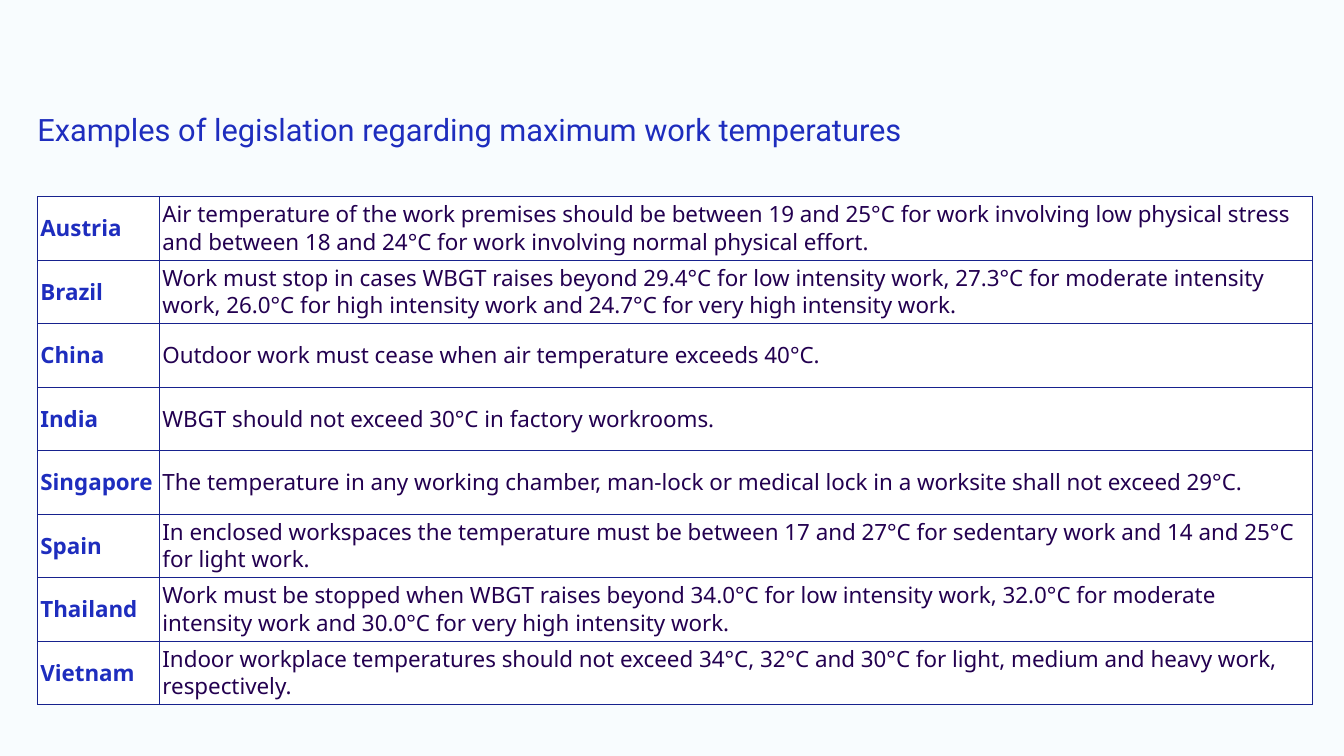
"""Build a slide with a table of national limits on work temperatures."""
from typing import NamedTuple

from lxml.etree import SubElement
from pptx import Presentation
from pptx.dml.color import RGBColor
from pptx.enum.text import MSO_ANCHOR
from pptx.oxml.ns import qn
from pptx.slide import Slide
from pptx.table import _Cell
from pptx.text.text import _Paragraph
from pptx.util import Inches, Pt

COLOURS = {
    "background": "F8FCFE",
    "heading": "1E2DBE",
    "body": "230050",
    "border": "17228E",
    "cell": "FFFFFF",
}
SLIDE_WIDTH, SLIDE_HEIGHT = Inches(13.33), Inches(7.5)
LEFT = 2.78
TITLE_TOP, TITLE_WIDTH, TITLE_HEIGHT = 15.2, 94.6, 6.8
TABLE_TOP, ROW_HEIGHT = 26, 8.4
COLUMN_WIDTHS = (9.08, 85.82)


class Rule(NamedTuple):
    country: str
    limit: str


RULES = (
    Rule("Austria", "Air temperature of the work premises should be between 19 and 25°C for work "
         "involving low physical stress and between 18 and 24°C for work involving normal "
         "physical effort."),
    Rule("Brazil", "Work must stop in cases WBGT raises beyond 29.4°C for low intensity work, "
         "27.3°C for moderate intensity work, 26.0°C for high intensity work and 24.7°C for "
         "very high intensity work."),
    Rule("China", "Outdoor work must cease when air temperature exceeds 40°C."),
    Rule("India", "WBGT should not exceed 30°C in factory workrooms."),
    Rule("Singapore", "The temperature in any working chamber, man-lock or medical lock in a "
         "worksite shall not exceed 29°C."),
    Rule("Spain", "In enclosed workspaces the temperature must be between 17 and 27°C for "
         "sedentary work and 14 and 25°C for light work."),
    Rule("Thailand", "Work must be stopped when WBGT raises beyond 34.0°C for low intensity "
         "work, 32.0°C for moderate intensity work and 30.0°C for very high intensity work."),
    Rule("Vietnam", "Indoor workplace temperatures should not exceed 34°C, 32°C and 30°C for "
         "light, medium and heavy work, respectively."),
)


def across(percent: float) -> int:
    return round(SLIDE_WIDTH * percent / 100)


def down(percent: float) -> int:
    return round(SLIDE_HEIGHT * percent / 100)


def colour(name: str) -> RGBColor:
    return RGBColor.from_string(COLOURS[name])


def write(para: _Paragraph, text: str, font: str, size: int, ink: str, bold: bool = False) -> None:
    para.text = text
    para.line_spacing = 0.9
    para.font.name = font
    para.font.size = Pt(size)
    para.font.bold = bold
    para.font.color.rgb = colour(ink)


def add_title(page: Slide, text: str) -> None:
    box = page.shapes.add_textbox(
        across(LEFT), down(TITLE_TOP), across(TITLE_WIDTH), down(TITLE_HEIGHT))
    frame = box.text_frame
    frame.word_wrap = True
    frame.margin_left = frame.margin_right = frame.margin_top = frame.margin_bottom = 0
    write(frame.paragraphs[0], text, "Roboto", 22, "heading")


def style_cell(cell: _Cell) -> None:
    cell.margin_left = cell.margin_right = Inches(0.03)
    cell.margin_top = cell.margin_bottom = Inches(0.01)
    cell.vertical_anchor = MSO_ANCHOR.MIDDLE
    properties = cell._tc.get_or_add_tcPr()
    for side in ("L", "R", "T", "B"):
        line = SubElement(properties, qn(f"a:ln{side}"), w=str(Pt(0.5)))
        fill = SubElement(line, qn("a:solidFill"))
        SubElement(fill, qn("a:srgbClr"), val=COLOURS["border"])
    cell.fill.solid()
    cell.fill.fore_color.rgb = colour("cell")


def add_rules(page: Slide, rules: tuple[Rule, ...]) -> None:
    table = page.shapes.add_table(
        len(rules), len(COLUMN_WIDTHS), across(LEFT), down(TABLE_TOP),
        across(sum(COLUMN_WIDTHS)), down(ROW_HEIGHT * len(rules))).table
    table.first_row = table.horz_banding = False
    for column, width in zip(table.columns, COLUMN_WIDTHS):
        column.width = across(width)
    for row, rule in zip(table.rows, rules):
        row.height = down(ROW_HEIGHT)
        for cell, text, ink in zip(row.cells, rule, ("heading", "body")):
            style_cell(cell)
            para = cell.text_frame.paragraphs[0]
            write(para, text, "Noto Sans", 16, ink, bold=ink == "heading")


def main() -> None:
    deck = Presentation()
    deck.slide_width, deck.slide_height = SLIDE_WIDTH, SLIDE_HEIGHT
    page = deck.slides.add_slide(deck.slide_layouts[6])
    page.background.fill.solid()
    page.background.fill.fore_color.rgb = colour("background")
    add_title(page, "Examples of legislation regarding maximum work temperatures")
    add_rules(page, RULES)
    deck.save("out.pptx")


if __name__ == "__main__":
    main()
